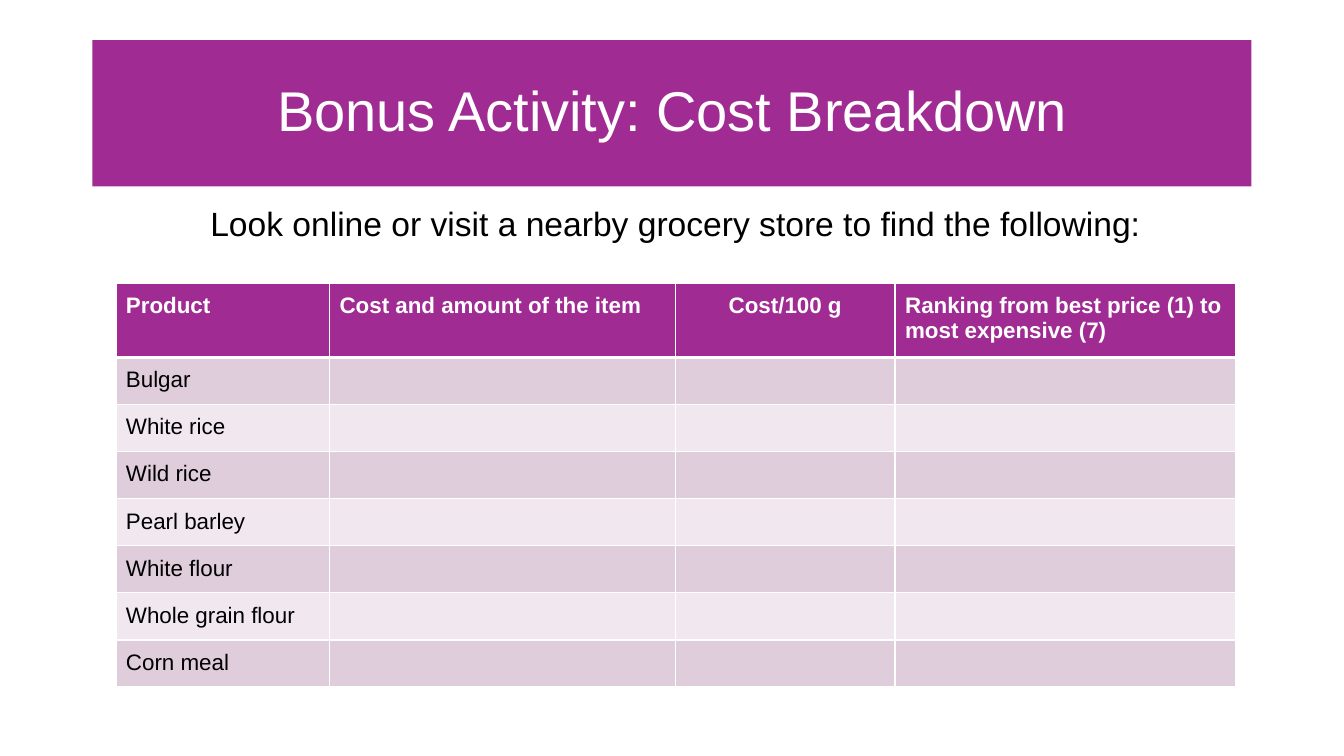
import pptx
import pptx.dml.color
import pptx.enum.shapes
import pptx.enum.text
import pptx.oxml
import pptx.oxml.ns
import pptx.util

Pt = pptx.util.Pt
RGBColor = pptx.dml.color.RGBColor
PP_ALIGN = pptx.enum.text.PP_ALIGN
MSO_ANCHOR = pptx.enum.text.MSO_ANCHOR

PURPLE = RGBColor(0xA0, 0x2B, 0x93)
BAND_DARK = RGBColor(0xDF, 0xCD, 0xDC)
BAND_LIGHT = RGBColor(0xF0, 0xE8, 0xEE)
WHITE = RGBColor(0xFF, 0xFF, 0xFF)
BLACK = RGBColor(0, 0, 0)

HEADERS = [
    "Product",
    "Cost and amount of the item",
    "Cost/100 g",
    "Ranking from best price (1) to most expensive (7)",
]
PRODUCTS = [
    "Bulgar", "White rice", "Wild rice", "Pearl barley",
    "White flour", "Whole grain flour", "Corn meal",
]
COLUMN_WIDTHS = [152.6, 247, 157, 243.4]
HEADER_HEIGHT = 49.5
ROW_HEIGHT = 32.15


def write_text(tf, text, font="Arial", size=16, color=BLACK, bold=False,
               align=PP_ALIGN.LEFT, line_spacing=1.0):
    tf.word_wrap = True
    p = tf.paragraphs[0]
    p.alignment = align
    p.line_spacing = line_spacing
    r = p.add_run()
    r.text = text
    r.font.name = font
    r.font.size = Pt(size)
    r.font.color.rgb = color
    r.font.bold = bold


def set_borders(cell, color, **widths):
    tc_pr = cell._tc.get_or_add_tcPr()
    ns = pptx.oxml.ns.nsdecls("a")
    for i, side in enumerate("LRTB"):
        width = int(Pt(widths.get(side, 1)))
        tc_pr.insert(i, pptx.oxml.parse_xml(
            f'<a:ln{side} {ns} w="{width}"><a:solidFill>'
            f'<a:srgbClr val="{color}"/></a:solidFill></a:ln{side}>'))


class SlideBuilder:
    def __init__(self, slide, font="Arial"):
        self.s = slide
        self.font = font

    def banner(self, text, x, y, w, h):
        sp = self.s.shapes.add_shape(
            pptx.enum.shapes.MSO_SHAPE.RECTANGLE, Pt(x), Pt(y), Pt(w), Pt(h))
        sp.shadow.inherit = False
        sp.fill.solid()
        sp.fill.fore_color.rgb = PURPLE
        sp.line.fill.background()
        sp.text_frame.vertical_anchor = MSO_ANCHOR.MIDDLE
        write_text(sp.text_frame, text, font=self.font, size=40, color=WHITE,
                   align=PP_ALIGN.CENTER, line_spacing=0.9)

    def text(self, text, x, y, w, h):
        sp = self.s.shapes.add_textbox(Pt(x), Pt(y), Pt(w), Pt(h))
        write_text(sp.text_frame, text, font=self.font, size=24,
                   align=PP_ALIGN.CENTER, line_spacing=0.9)

    def cell(self, cell, text, fill, **fmt):
        cell.fill.solid()
        cell.fill.fore_color.rgb = fill
        if text:
            cell.margin_left = cell.margin_right = Pt(7.2)
            cell.margin_top = cell.margin_bottom = Pt(7.2)
            write_text(cell.text_frame, text, font=self.font, **fmt)

    def table(self, headers, products, x, y):
        heights = [HEADER_HEIGHT] + [ROW_HEIGHT] * len(products)
        table = self.s.shapes.add_table(
            len(heights), len(headers), Pt(x), Pt(y),
            Pt(sum(COLUMN_WIDTHS)), Pt(sum(heights))).table
        table.horz_banding = False
        for column, width in zip(table.columns, COLUMN_WIDTHS):
            column.width = Pt(width)
        for row, height in zip(table.rows, heights):
            row.height = Pt(height)
        for j, header in enumerate(headers):
            align = PP_ALIGN.CENTER if j == 2 else PP_ALIGN.LEFT
            cell = table.cell(0, j)
            self.cell(cell, header, PURPLE, color=WHITE, bold=True, align=align)
            set_borders(cell, WHITE, B=3)
        for i, product in enumerate(products, start=1):
            fill = BAND_DARK if i % 2 else BAND_LIGHT
            for j in range(len(headers)):
                cell = table.cell(i, j)
                self.cell(cell, "" if j else product, fill)
                set_borders(cell, WHITE, T=3 if i == 1 else 1)


def main():
    prs = pptx.Presentation()
    prs.slide_width, prs.slide_height = Pt(960), Pt(540)
    slide = SlideBuilder(prs.slides.add_slide(prs.slide_layouts[6]))
    slide.banner("Bonus Activity: Cost Breakdown", 66, 28.75, 828, 104.4)
    slide.text("Look online or visit a nearby grocery store to find the following:",
               86.4, 144.7, 792, 46)
    slide.table(HEADERS, PRODUCTS, 82.8, 202.6)
    prs.save("out.pptx")


if __name__ == "__main__":
    main()
